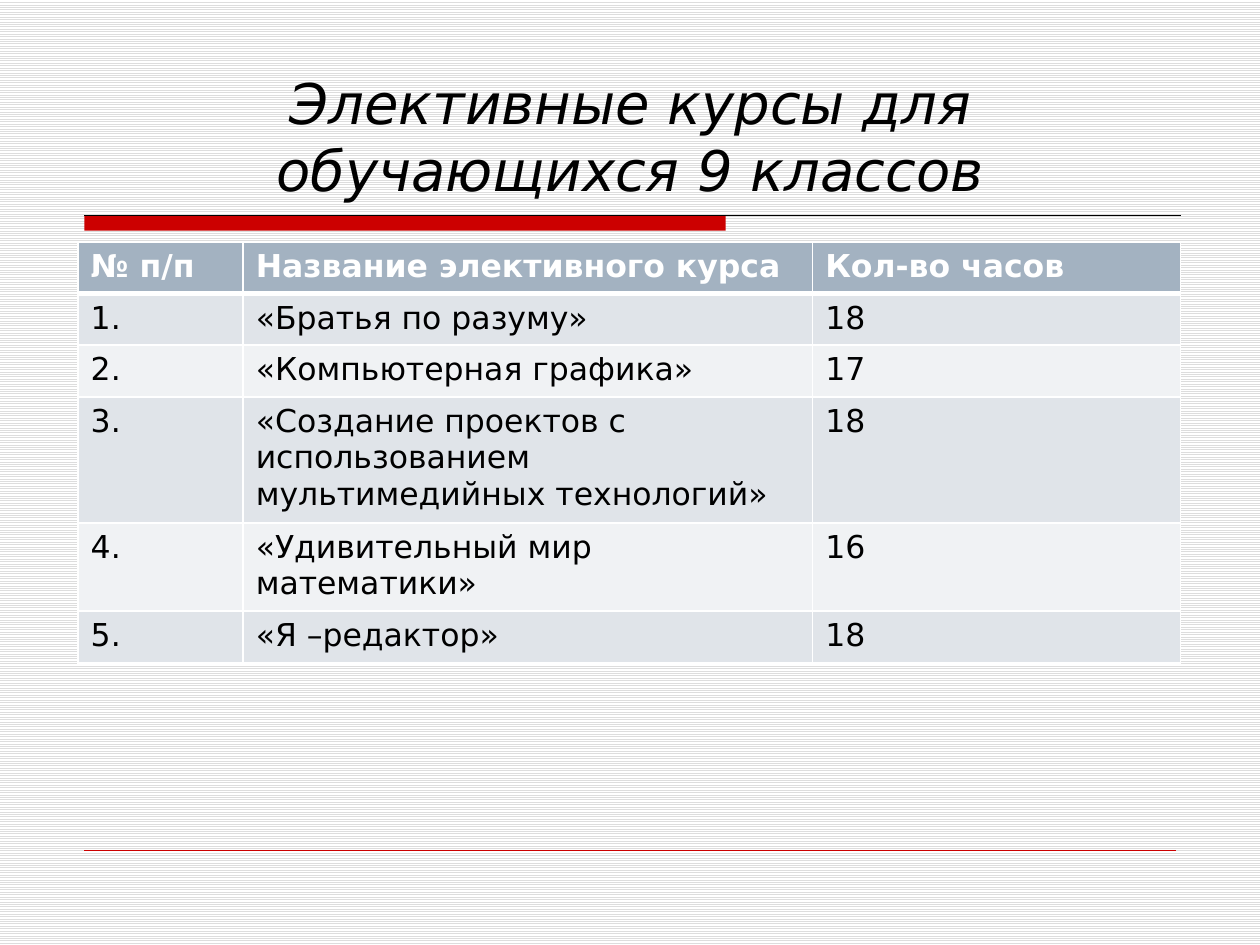
from lxml.etree import SubElement
from pptx import Presentation
from pptx.dml.color import RGBColor
from pptx.enum.dml import MSO_PATTERN
from pptx.enum.shapes import MSO_CONNECTOR, MSO_SHAPE
from pptx.enum.text import MSO_ANCHOR, PP_ALIGN
from pptx.oxml.ns import qn
from pptx.util import Inches, Pt

FONT = "DejaVu Sans"
RED = "CC0000"
BLACK = "000000"
WHITE = "FFFFFF"
HEADER_FILL = "A3B2C1"
BAND_FILLS = ("E0E4E9", "F0F2F4")
COLUMN_WIDTHS = (1.31, 4.52, 2.92)
ROW_HEIGHT = 0.41
COURSES = (
    ("№ п/п", "Название элективного курса", "Кол-во часов"),
    ("1.", "«Братья по разуму»", "18"),
    ("2.", "«Компьютерная графика»", "17"),
    ("3.", "«Создание проектов с использованием мультимедийных технологий»", "18"),
    ("4.", "«Удивительный мир математики»", "16"),
    ("5.", "«Я –редактор»", "18"),
)


def color(hex_value):
    return RGBColor.from_string(hex_value)


def set_background(slide):
    fill = slide.background.fill
    fill.patterned()
    fill.pattern = MSO_PATTERN.LIGHT_HORIZONTAL
    fill.fore_color.rgb = color("DDDDDD")
    fill.back_color.rgb = color(WHITE)


def format_text(text_frame, size, hex_value, bold=False, italic=False):
    for paragraph in text_frame.paragraphs:
        for run in paragraph.runs:
            font = run.font
            font.name, font.size = FONT, Pt(size)
            font.bold, font.italic = bold, italic
            font.color.rgb = color(hex_value)


def add_title(slide, text):
    box = slide.shapes.add_textbox(Inches(0.63), Inches(0.33), Inches(8.75), Inches(1.33))
    text_frame = box.text_frame
    text_frame.word_wrap = True
    text_frame.vertical_anchor = MSO_ANCHOR.BOTTOM
    text_frame.text = text
    text_frame.paragraphs[0].alignment = PP_ALIGN.CENTER
    format_text(text_frame, 32, BLACK, italic=True)


def add_bar(slide, left, top, width, height, hex_value):
    bar = slide.shapes.add_shape(
        MSO_SHAPE.RECTANGLE, Inches(left), Inches(top), Inches(width), Inches(height))
    bar.shadow.inherit = False
    bar.fill.solid()
    bar.fill.fore_color.rgb = color(hex_value)
    bar.line.fill.background()


def add_rule(slide, left, right, top, hex_value, width):
    rule = slide.shapes.add_connector(
        MSO_CONNECTOR.STRAIGHT, Inches(left), Inches(top), Inches(right), Inches(top))
    rule.line.color.rgb = color(hex_value)
    rule.line.width = Pt(width)
    SubElement(rule.element.spPr, qn("a:effectLst"))


def set_borders(cell, top, bottom):
    """Draw white borders; top and bottom are widths in points."""
    properties = cell._tc.get_or_add_tcPr()
    for side, width in (("L", 1), ("R", 1), ("T", top), ("B", bottom)):
        border = SubElement(properties, qn(f"a:ln{side}"), w=str(Pt(width)))
        fill = SubElement(border, qn("a:solidFill"))
        SubElement(fill, qn("a:srgbClr"), val=WHITE)


def add_course_table(slide):
    table = slide.shapes.add_table(
        len(COURSES), len(COLUMN_WIDTHS), Inches(0.62), Inches(1.92),
        Inches(sum(COLUMN_WIDTHS)), Inches(ROW_HEIGHT * len(COURSES))).table
    for column, width in zip(table.columns, COLUMN_WIDTHS):
        column.width = Inches(width)
    for row_index, values in enumerate(COURSES):
        is_header = row_index == 0
        table.rows[row_index].height = Inches(ROW_HEIGHT)
        for column_index, value in enumerate(values):
            cell = table.cell(row_index, column_index)
            cell.text_frame.text = value
            format_text(cell.text_frame, 18, WHITE if is_header else BLACK, bold=is_header)
            set_borders(cell, top=3 if row_index == 1 else 1, bottom=3 if is_header else 1)
            cell.fill.solid()
            cell.fill.fore_color.rgb = color(
                HEADER_FILL if is_header else BAND_FILLS[(row_index - 1) % 2])


def main():
    presentation = Presentation()
    presentation.slide_width, presentation.slide_height = Inches(10), Inches(7.5)
    slide = presentation.slides.add_slide(presentation.slide_layouts[6])
    set_background(slide)
    add_bar(slide, 0.67, 1.71, 5.09, 0.12, RED)
    add_rule(slide, 0.67, 9.37, 1.71, BLACK, 0.75)
    add_rule(slide, 0.67, 9.33, 6.75, RED, 0.25)
    add_title(slide, "Элективные курсы для обучающихся 9 классов")
    add_course_table(slide)
    presentation.save("out.pptx")


if __name__ == "__main__":
    main()
